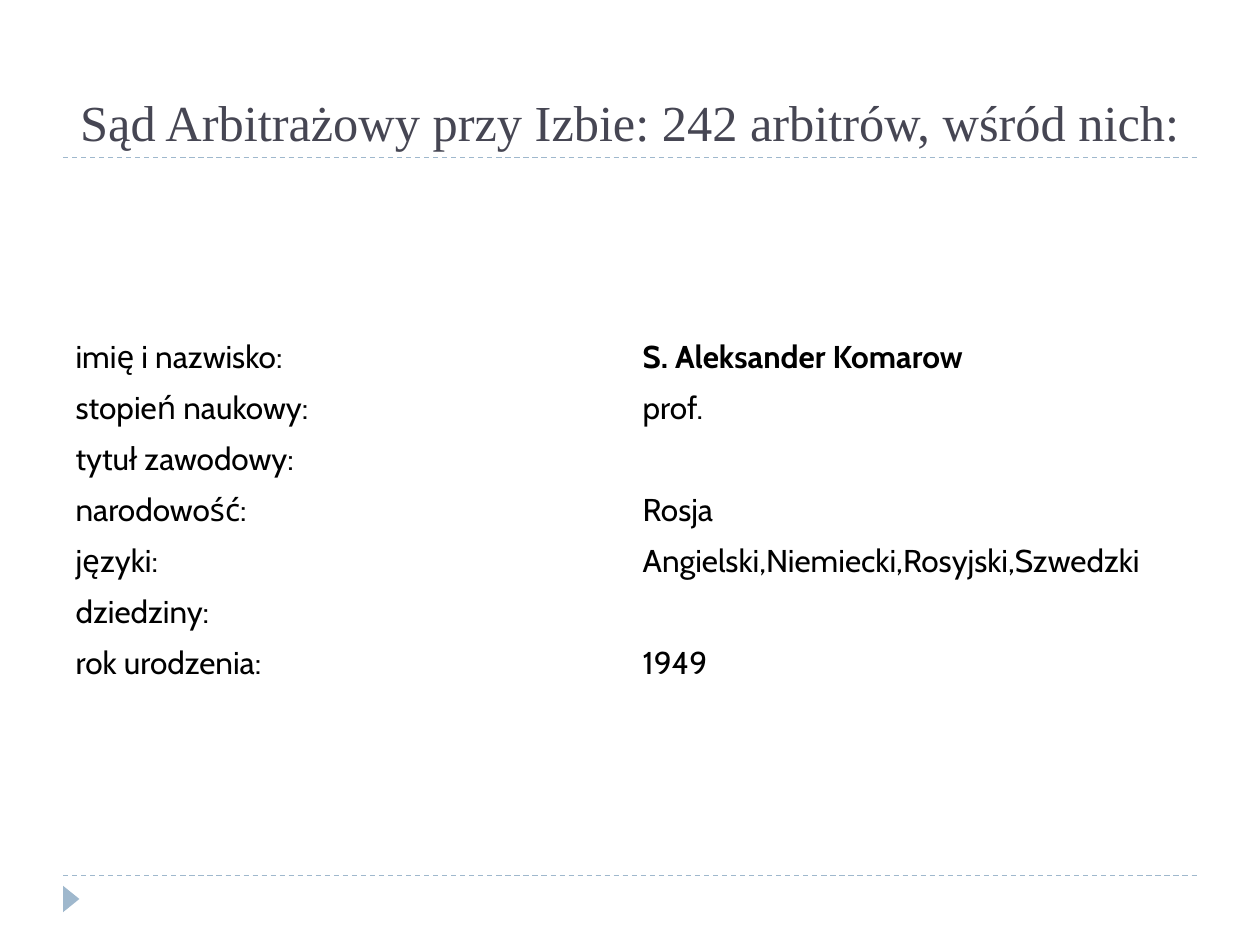
from dataclasses import dataclass

from lxml.etree import SubElement
from pptx import Presentation
from pptx.dml.color import RGBColor as Rgb
from pptx.enum.dml import MSO_LINE_DASH_STYLE as Dash
from pptx.enum.shapes import MSO_CONNECTOR as Connector, MSO_SHAPE as Shape
from pptx.enum.text import MSO_ANCHOR as Anchor, PP_ALIGN as Align
from pptx.oxml.ns import qn
from pptx.util import Inches, Pt


@dataclass(frozen=True)
class Theme:
    accent: Rgb = Rgb(0x9F, 0xB8, 0xCD)
    title_color: Rgb = Rgb(0x46, 0x46, 0x53)
    body_color: Rgb = Rgb(0, 0, 0)
    title_font: str = "Times New Roman"
    body_font: str = "Cabin"
    title_size: float = 28.8
    body_size: float = 18
    rule_width: float = 0.75


THEME = Theme()
WIDTH, HEIGHT = 10, 7.5
MARGIN = WIDTH / 20
CONTENT = WIDTH - 2 * MARGIN
TITLE_RULE, FOOTER_RULE = 1.25, 6.95
TABLE_TOP, TABLE_HEIGHT = 2.63, 2.84
TITLE = "Sąd Arbitrażowy przy Izbie: 242 arbitrów, wśród nich: "
ARBITRATOR = [
    ("imię i nazwisko:", "S. Aleksander Komarow"),
    ("stopień naukowy:", "prof."),
    ("tytuł zawodowy:", ""),
    ("narodowość:", "Rosja"),
    ("języki:", "Angielski,Niemiecki,Rosyjski,Szwedzki"),
    ("dziedziny:", ""),
    ("rok urodzenia:", "1949"),
]


def add_span(para, text, font, size, color, bold=False):
    span = para.add_run()
    span.text = text
    span.font.name = font
    span.font.size = Pt(size)
    span.font.color.rgb = color
    span.font.bold = bold


def add_rule(page, y):
    rule = page.shapes.add_connector(
        Connector.STRAIGHT, Inches(MARGIN), Inches(y), Inches(MARGIN + CONTENT), Inches(y))
    rule.line.color.rgb = THEME.accent
    rule.line.width = Pt(THEME.rule_width)
    rule.line.dash_style = Dash.DASH
    SubElement(rule._element.spPr, qn("a:effectLst"))


def add_marker(page):
    marker = page.shapes.add_shape(
        Shape.ISOSCELES_TRIANGLE, Inches(0.46), Inches(7.07), Inches(0.21), Inches(0.13))
    marker.rotation = 90
    marker.shadow.inherit = False
    marker.fill.solid()
    marker.fill.fore_color.rgb = THEME.accent
    marker.line.fill.background()


def add_title(page):
    top = 0.17
    box = page.shapes.add_textbox(
        Inches(MARGIN), Inches(top), Inches(CONTENT), Inches(TITLE_RULE - top))
    box.text_frame.word_wrap = True
    box.text_frame.vertical_anchor = Anchor.BOTTOM
    para = box.text_frame.paragraphs[0]
    para.alignment = Align.CENTER
    add_span(para, TITLE, THEME.title_font, THEME.title_size, THEME.title_color)


def add_profile(page):
    table = page.shapes.add_table(
        len(ARBITRATOR), 2, Inches(MARGIN), Inches(TABLE_TOP),
        Inches(CONTENT), Inches(TABLE_HEIGHT)).table
    table.first_row = table.horz_banding = False
    for row, texts in enumerate(ARBITRATOR):
        for column, text in enumerate(texts):
            cell = table.cell(row, column)
            cell.fill.background()
            cell.vertical_anchor = Anchor.MIDDLE
            if text:
                add_span(cell.text_frame.paragraphs[0], text, THEME.body_font,
                         THEME.body_size, THEME.body_color, bold=(row, column) == (0, 1))


def main():
    """Build the arbitrator profile slide and save it."""
    deck = Presentation()
    deck.slide_width, deck.slide_height = Inches(WIDTH), Inches(HEIGHT)
    page = deck.slides.add_slide(deck.slide_layouts[6])
    for y in (FOOTER_RULE, TITLE_RULE):
        add_rule(page, y)
    add_marker(page)
    add_title(page)
    add_profile(page)
    deck.save("out.pptx")


if __name__ == "__main__":
    main()
